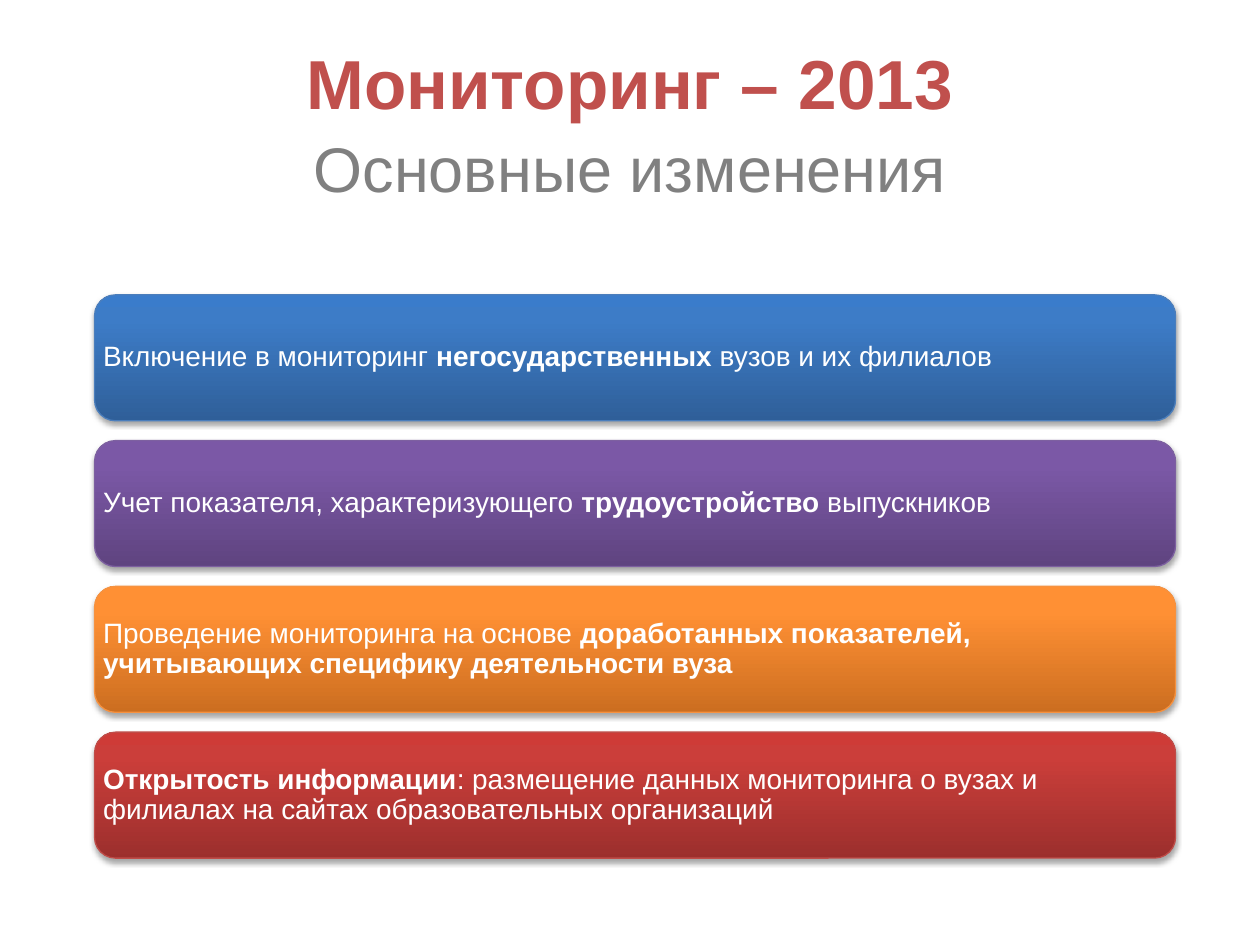
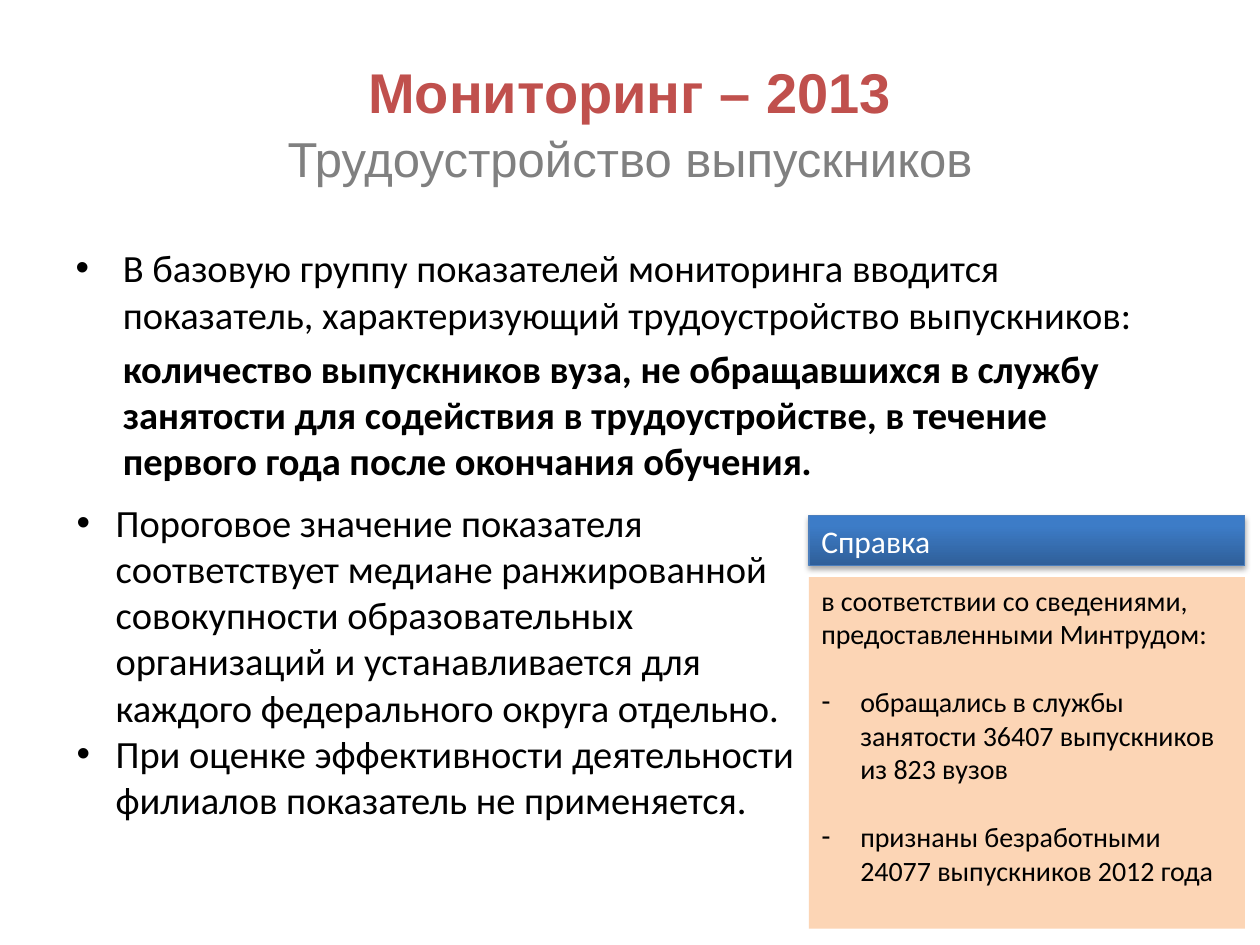
from copy import deepcopy

from lxml import etree
from pptx import Presentation
from pptx.dml.color import RGBColor
from pptx.enum import shapes, text
from pptx.oxml import ns
from pptx.util import Inches, Pt

# Shared colours and fonts
WHITE = RGBColor(0xFF, 0xFF, 0xFF)
BLACK = RGBColor(0, 0, 0)
TITLE_RED = RGBColor(0xC0, 0x50, 0x4D)
SUBTITLE_GRAY = RGBColor(0x80, 0x80, 0x80)
PEACH = RGBColor(0xFC, 0xD5, 0xB5)
HEADING_FONT = "Arial"
BODY_FONT = "Calibri"

# Each theme: gradient from bottom to top, then the outline
BLUE = [RGBColor.from_string(code) for code in ("2F5F99", "3D7CC7", "3A7CCB", "4B7EBC")]
PURPLE = [RGBColor.from_string(code) for code in ("5F4480", "7B58A6", "7C57A8", "7D60A0")]
ORANGE = [RGBColor.from_string(code) for code in ("CC6E20", "FF9034", "FF9136", "F69240")]
RED = [RGBColor.from_string(code) for code in ("9C2F2D", "CB3E3A", "CE3B37", "BF4C48")]
STOP_POSITIONS = (0, 0.8, 1)

CARDS = [
    (BLUE, [("Включение в мониторинг ", False), ("негосударственных ", True),
            ("вузов и их филиалов", False)]),
    (PURPLE, [("Учет показателя, характеризующего ", False), ("трудоустройство", True),
              (" выпускников", False)]),
    (ORANGE, [("Проведение мониторинга на основе ", False),
              ("доработанных показателей, учитывающих специфику деятельности вуза", True)]),
    (RED, [("Открытость информации", True),
           (": размещение данных мониторинга о вузах и филиалах на сайтах "
            "образовательных организаций", False)]),
]


def place(shape, left, top, width, height):
    shape.left, shape.top = Inches(left), Inches(top)
    shape.width, shape.height = Inches(width), Inches(height)


def set_font(paragraph, name, size, color):
    paragraph.font.name = name
    paragraph.font.size = Pt(size)
    paragraph.font.color.rgb = color


def add_runs(paragraph, parts):
    for wording, bold in parts:
        run = paragraph.add_run()
        run.text = wording
        run.font.bold = bold


def set_bullet(paragraph, character, indent=0.31):
    """Hanging bullet; call before other paragraph formatting."""
    properties = paragraph._p.get_or_add_pPr()
    properties.set("marL", str(Inches(indent)))
    properties.set("indent", str(-Inches(indent)))
    etree.SubElement(properties, ns.qn("a:buFont"), typeface=HEADING_FONT)
    etree.SubElement(properties, ns.qn("a:buChar"), char=character)


def add_paragraphs(frame, items, size):
    """Fill a frame from (wording, bullet or None, points before)."""
    for index, (wording, bullet, space_before) in enumerate(items):
        paragraph = frame.paragraphs[0] if index == 0 else frame.add_paragraph()
        if bullet:
            set_bullet(paragraph, bullet)
        paragraph.alignment = text.PP_ALIGN.LEFT
        paragraph.space_before = Pt(space_before)
        set_font(paragraph, BODY_FONT, size, BLACK)
        paragraph.add_run().text = wording


def add_title(slide, subtitle, main_size, subtitle_size):
    title = slide.shapes.title
    place(title, 0.5, 0.3, 9, 1.25)
    frame = title.text_frame
    frame.auto_size = text.MSO_AUTO_SIZE.NONE
    frame.vertical_anchor = text.MSO_ANCHOR.MIDDLE
    frame.margin_top = Inches(0.1)
    paragraph = frame.paragraphs[0]
    paragraph.alignment = text.PP_ALIGN.CENTER
    paragraph.line_spacing = 1.08
    set_font(paragraph, HEADING_FONT, main_size, TITLE_RED)
    add_runs(paragraph, [("Мониторинг – 2013", True)])
    paragraph.add_line_break()
    add_runs(paragraph, [(subtitle, False)])
    subtitle_font = paragraph.runs[-1].font
    subtitle_font.size = Pt(subtitle_size)
    subtitle_font.color.rgb = SUBTITLE_GRAY


def add_shadow(shape):
    shape.shadow.inherit = False
    effects = shape._element.spPr.find(ns.qn("a:effectLst"))
    shadow = etree.SubElement(effects, ns.qn("a:outerShdw"), blurRad=str(Pt(3.1)),
                              dist=str(Pt(1.8)), dir="5400000", rotWithShape="0")
    color = etree.SubElement(shadow, ns.qn("a:srgbClr"), val="000000")
    etree.SubElement(color, ns.qn("a:alpha"), val="35000")


def add_glossy_box(slide, kind, box, theme):
    """Shape with a three-stop vertical gradient and a soft shadow."""
    shape = slide.shapes.add_shape(kind, *map(Inches, box))
    *stop_colors, line_color = theme
    shape.fill.gradient()
    stop_list = shape._element.spPr.find(".//" + ns.qn("a:gsLst"))
    stop_list.append(deepcopy(stop_list[-1]))
    for stop, position, color in zip(shape.fill.gradient_stops, STOP_POSITIONS, stop_colors):
        stop.position = position
        stop.color.rgb = color
    shape.fill.gradient_angle = 90
    shape.line.color.rgb = line_color
    shape.line.width = Pt(0.75)
    add_shadow(shape)
    frame = shape.text_frame
    frame.word_wrap = True
    frame.vertical_anchor = text.MSO_ANCHOR.MIDDLE
    frame.paragraphs[0].alignment = text.PP_ALIGN.LEFT
    return shape


def add_card(slide, top, theme, parts):
    card = add_glossy_box(slide, shapes.MSO_SHAPE.ROUNDED_RECTANGLE,
                          (0.75, top, 8.58, 1), theme)
    frame = card.text_frame
    frame.margin_left = frame.margin_right = Inches(0.02)
    paragraph = frame.paragraphs[0]
    paragraph.line_spacing = 0.9
    set_font(paragraph, HEADING_FONT, 16, WHITE)
    add_runs(paragraph, parts)


def add_indicator_text(slide):
    body = slide.placeholders[1]
    place(body, 0.5, 1.89, 9, 2.26)
    frame = body.text_frame
    frame.auto_size = text.MSO_AUTO_SIZE.NONE
    introduction = frame.paragraphs[0]
    definition = frame.add_paragraph()
    # The definition lines up with the bulleted text, without a bullet
    properties = definition._p.get_or_add_pPr()
    properties.set("indent", "0")
    etree.SubElement(properties, ns.qn("a:buNone"))
    for paragraph in (introduction, definition):
        set_font(paragraph, BODY_FONT, 22, BLACK)
    add_runs(introduction, [("В базовую группу показателей мониторинга вводится показатель, "
                             "характеризующий трудоустройство выпускников:", False)])
    add_runs(definition, [("количество выпускников вуза, не обращавшихся в службу занятости "
                           "для содействия в трудоустройстве, в течение первого года после "
                           "окончания обучения", True), (".", True)])
    definition.runs[-1].font.italic = True


def add_threshold_text(slide):
    box = slide.shapes.add_textbox(*map(Inches, (0.51, 3.91, 5.91, 3.06)))
    box.text_frame.word_wrap = True
    add_paragraphs(box.text_frame, [
        ("Пороговое значение показателя соответствует медиане ранжированной совокупности "
         "образовательных организаций и устанавливается для каждого федерального округа "
         "отдельно.", "•", 0),
        ("При оценке эффективности деятельности филиалов показатель не применяется.", "•", 0),
    ], 22)


def add_reference(slide):
    # Header band
    header = add_glossy_box(slide, shapes.MSO_SHAPE.RECTANGLE, (6.42, 4.09, 3.46, 0.4), BLUE)
    paragraph = header.text_frame.paragraphs[0]
    set_font(paragraph, BODY_FONT, 18, WHITE)
    paragraph.add_run().text = "Справка"
    # Details
    details = slide.shapes.add_shape(shapes.MSO_SHAPE.RECTANGLE,
                                     *map(Inches, (6.42, 4.58, 3.46, 2.79)))
    details.shadow.inherit = False
    details.fill.solid()
    details.fill.fore_color.rgb = PEACH
    details.line.fill.background()
    frame = details.text_frame
    frame.word_wrap = True
    frame.vertical_anchor = text.MSO_ANCHOR.TOP
    add_paragraphs(frame, [
        ("в соответствии со сведениями, предоставленными Минтрудом:", None, 0),
        ("обращались в службы занятости 36407 выпускников из 823 вузов", "-", 19.5),
        ("признаны безработными 24077 выпускников 2012 года", "-", 19.5),
    ], 16)


def main():
    presentation = Presentation()
    presentation.slide_width, presentation.slide_height = Inches(10), Inches(7.5)
    content_layout, title_layout = (presentation.slide_layouts[i] for i in (1, 5))

    # Main changes
    slide = presentation.slides.add_slide(title_layout)
    add_title(slide, "Основные изменения", 39.6, 36)
    for index, (theme, parts) in enumerate(CARDS):
        add_card(slide, 2.34 + 1.157 * index, theme, parts)

    # Graduate employment
    slide = presentation.slides.add_slide(content_layout)
    add_title(slide, "Трудоустройство выпускников", 32, 28)
    add_indicator_text(slide)
    add_threshold_text(slide)
    add_reference(slide)

    presentation.save("out.pptx")


if __name__ == "__main__":
    main()
